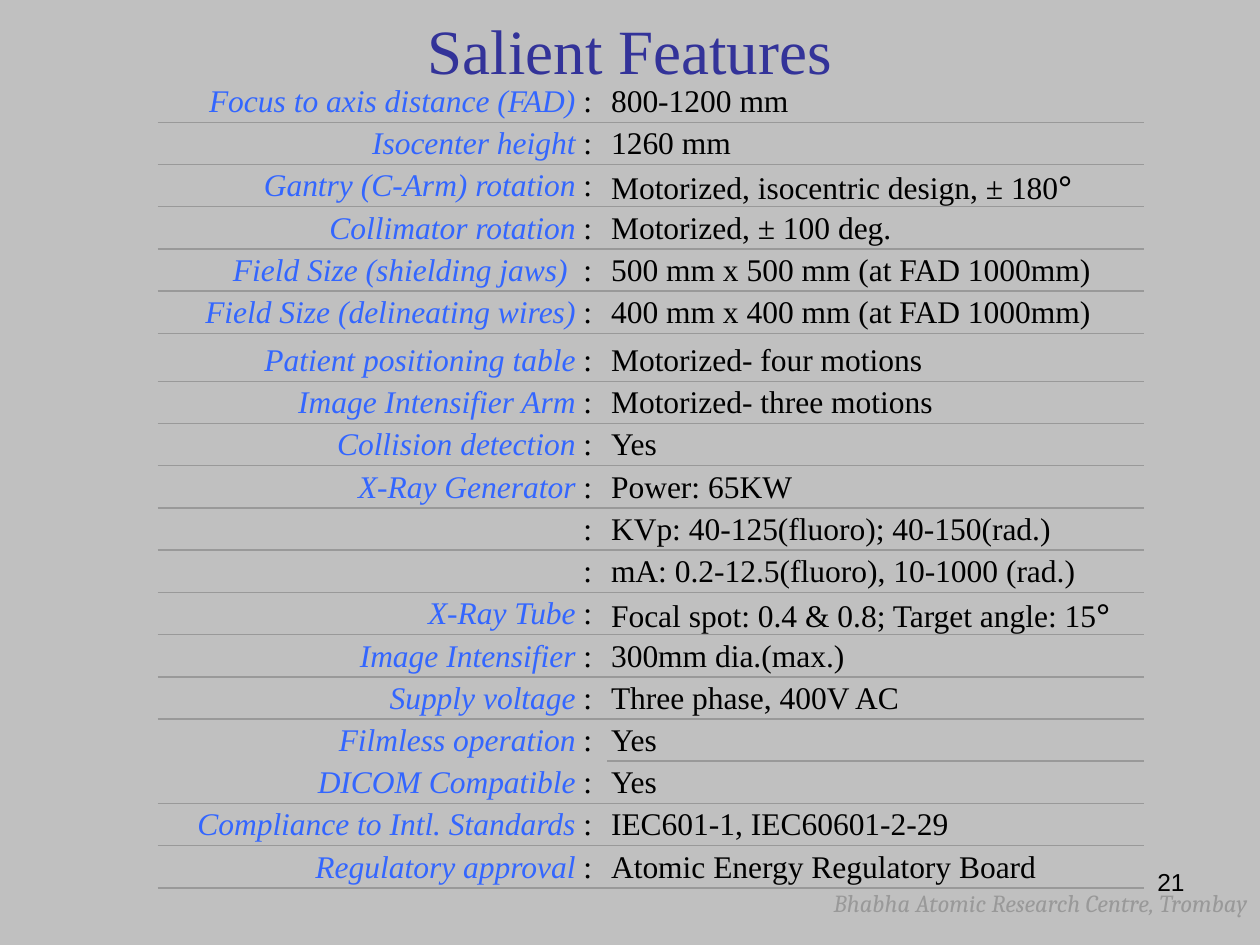
from dataclasses import dataclass

import lxml.etree
import pptx
import pptx.dml.color
import pptx.enum.text
import pptx.oxml.ns
import pptx.util

Inches = pptx.util.Inches
Align = pptx.enum.text.PP_ALIGN
Anchor = pptx.enum.text.MSO_ANCHOR
qn = pptx.oxml.ns.qn

SERIF = "Times New Roman"
RULE_COLOUR = "999999"
PLAIN_STYLE = "{2D5ABB26-0587-4C30-8999-92F81FD0307C}"
COLUMN_WIDTHS = (3.35, 0.22, 0.83, 3.43)
TEXT_HEIGHT = Inches(0.29)
GAP_HEIGHT = Inches(13) // 40 - TEXT_HEIGHT
WIDE_GAP = Inches(0.08)
LAST_GAP = Inches(0.21)


@dataclass
class Feature:
    label: str
    value: str
    gap: int = GAP_HEIGHT
    open_label: bool = False


@dataclass
class Caption:
    text: str
    place: tuple
    style: dict
    align: Align
    anchor: Anchor = Anchor.TOP


FEATURES = [
    Feature("Focus to axis distance (FAD)", "800-1200 mm"),
    Feature("Isocenter height", "1260 mm"),
    Feature("Gantry (C-Arm) rotation", "Motorized, isocentric design, ± 180°"),
    Feature("Collimator rotation", "Motorized, ± 100 deg."),
    Feature("Field Size (shielding jaws) ", "500 mm x 500 mm (at FAD 1000mm)"),
    Feature("Field Size (delineating wires)", "400 mm x 400 mm (at FAD 1000mm)", WIDE_GAP),
    Feature("Patient positioning table", "Motorized- four motions"),
    Feature("Image Intensifier Arm", "Motorized- three motions"),
    Feature("Collision detection", "Yes"),
    Feature("X-Ray Generator", "Power: 65KW"),
    Feature("", "KVp: 40-125(fluoro); 40-150(rad.)"),
    Feature("", "mA: 0.2-12.5(fluoro), 10-1000 (rad.)"),
    Feature("X-Ray Tube", "Focal spot: 0.4 & 0.8; Target angle: 15°"),
    Feature("Image Intensifier", "300mm dia.(max.)"),
    Feature("Supply voltage", "Three phase, 400V AC"),
    Feature("Filmless operation", "Yes", open_label=True),
    Feature("DICOM Compatible", "Yes"),
    Feature("Compliance to Intl. Standards", "IEC601-1, IEC60601-2-29"),
    Feature("Regulatory approval", "Atomic Energy Regulatory Board", LAST_GAP),
]


def text_style(name: str, points: int, colour: str, italic: bool = False) -> dict:
    return {"name": name, "size": pptx.util.Pt(points), "italic": italic, "colour": colour}


LABEL_STYLE = text_style(SERIF, 18, "3366FF", True)
VALUE_STYLE = text_style(SERIF, 18, "000000")
DEGREE_STYLE = text_style("Lato", 18, "000000")

CAPTIONS = [
    Caption("Salient Features", (0.5, 0, 9, 0.78),
            text_style(SERIF, 36, "333399"), Align.CENTER, Anchor.MIDDLE),
    Caption("Bhabha Atomic Research Centre, Trombay", (5.92, 7, 4.08, 0.4),
            text_style("Cambria", 14, "999999", True), Align.RIGHT),
    Caption("21", (7.17, 6.83, 2.33, 0.52),
            text_style("Arial", 14, "000000"), Align.RIGHT),
]


def rgb(colour: str) -> pptx.dml.color.RGBColor:
    return pptx.dml.color.RGBColor.from_string(colour)


def add_span(para, text: str, style: dict) -> None:
    span = para.add_run()
    span.text = text
    for name, value in style.items():
        if name == "colour":
            span.font.color.rgb = rgb(value)
        else:
            setattr(span.font, name, value)


def add_caption(page, caption: Caption) -> None:
    box = page.shapes.add_textbox(*map(Inches, caption.place))
    frame = box.text_frame
    frame.word_wrap = True
    frame.vertical_anchor = caption.anchor
    para = frame.paragraphs[0]
    para.alignment = caption.align
    add_span(para, caption.text, caption.style)


def clear_cell(cell, side: float) -> None:
    margins = {"margin_left": side, "margin_right": side, "margin_top": 0, "margin_bottom": 0}
    for name, value in margins.items():
        setattr(cell, name, Inches(value))
    cell.fill.background()


def fill_cell(cell, text: str, style: dict, align: Align) -> None:
    para = cell.text_frame.paragraphs[0]
    para.alignment = align
    if not text:
        lxml.etree.SubElement(para._p, qn("a:endParaRPr"), sz="100")
        return
    words = text.removesuffix("°")
    add_span(para, words, style)
    if words != text:
        add_span(para, "°", DEGREE_STYLE)


def rule_below(cell) -> None:
    line = lxml.etree.Element(qn("a:lnB"), w=str(pptx.util.Pt(1)))
    fill = lxml.etree.SubElement(line, qn("a:solidFill"))
    lxml.etree.SubElement(fill, qn("a:srgbClr"), val=RULE_COLOUR)
    cell._tc.get_or_add_tcPr().insert(0, line)


def add_feature_table(page, features: list[Feature]) -> None:
    frame = page.shapes.add_table(
        2 * len(features), len(COLUMN_WIDTHS),
        Inches(1.25), Inches(0.67), Inches(sum(COLUMN_WIDTHS)), Inches(6.4))
    table = frame.table
    table._tbl.tblPr.find(qn("a:tableStyleId")).text = PLAIN_STYLE
    table.first_row = False
    table.horz_banding = False
    for column, width in zip(table.columns, COLUMN_WIDTHS):
        column.width = Inches(width)

    for index, feature in enumerate(features):
        top = 2 * index
        table.rows[top].height = TEXT_HEIGHT
        table.rows[top + 1].height = feature.gap
        contents = [
            (feature.label, LABEL_STYLE, Align.RIGHT),
            (":", VALUE_STYLE, Align.JUSTIFY),
            (feature.value, VALUE_STYLE, Align.LEFT),
            ("", VALUE_STYLE, Align.LEFT),
        ]
        for column, content in enumerate(contents):
            cell, spacer = table.cell(top, column), table.cell(top + 1, column)
            clear_cell(cell, 0.03)
            clear_cell(spacer, 0)
            fill_cell(cell, *content)
            fill_cell(spacer, "", VALUE_STYLE, Align.LEFT)
            if column > 1 or not feature.open_label:
                rule_below(cell)
        table.cell(top, 2).merge(table.cell(top, 3))
        if not feature.open_label:
            table.cell(top + 1, 2).merge(table.cell(top + 1, 3))


def main() -> None:
    deck = pptx.Presentation()
    deck.slide_width, deck.slide_height = Inches(10), Inches(7.5)
    page = deck.slides.add_slide(deck.slide_layouts[6])
    page.background.fill.solid()
    page.background.fill.fore_color.rgb = rgb("C0C0C0")
    title, *footers = CAPTIONS
    add_caption(page, title)
    add_feature_table(page, FEATURES)
    for footer in footers:
        add_caption(page, footer)
    deck.save("out.pptx")


if __name__ == "__main__":
    main()
